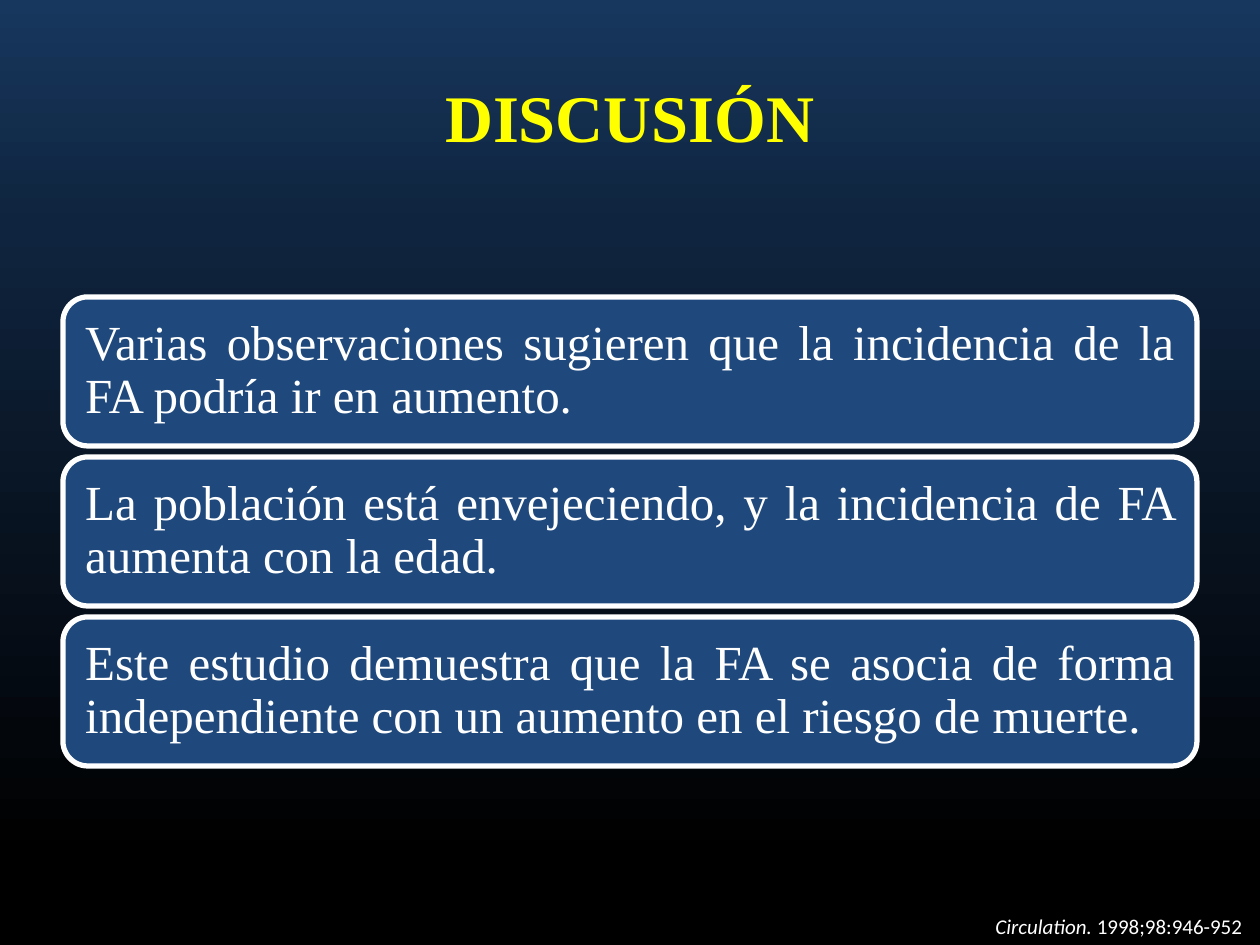
from copy import deepcopy

from pptx import Presentation
from pptx.dml.color import RGBColor
from pptx.enum.shapes import MSO_SHAPE
from pptx.enum.text import MSO_ANCHOR, MSO_AUTO_SIZE, PP_ALIGN
from pptx.oxml.ns import qn
from pptx.util import Pt

ROUNDED = MSO_SHAPE.ROUNDED_RECTANGLE
MIDDLE = MSO_ANCHOR.MIDDLE
CENTER, JUSTIFY = PP_ALIGN.CENTER, PP_ALIGN.JUSTIFY
FIT_SHAPE = MSO_AUTO_SIZE.SHAPE_TO_FIT_TEXT

EMU_PER_PX = 914400 / 126
SERIF, SANS = "Times New Roman", "Calibri"
COLORS = {
    "sky": "17375E",
    "navy": "0F243E",
    "black": "000000",
    "title": "FFFF00",
    "card": "1F497D",
    "white": "FFFFFF",
}
BACKDROP = [("sky", 0), ("navy", 0.24), ("black", 0.91)]
FINDINGS = [
    "Varias observaciones sugieren que la incidencia de la FA podría ir en aumento.",
    "La población está envejeciendo, y la incidencia de FA aumenta con la edad.",
    "Este estudio demuestra que la FA se asocia de forma independiente con un "
    "aumento en el riesgo de muerte.",
]


def px(length):
    return round(length * EMU_PER_PX)


def color(name):
    return RGBColor.from_string(COLORS[name])


def style(run, font_name, size, color_name, bold=False, italic=False):
    font = run.font
    font.name, font.size = font_name, Pt(size)
    font.bold, font.italic = bold, italic
    font.color.rgb = color(color_name)


def paint_background(slide):
    fill = slide.background.fill
    fill.gradient()
    fill.gradient_angle = 270
    # A new gradient has two stops; add the middle one
    first_stop = next(slide.element.iter(qn("a:gs")))
    first_stop.addnext(deepcopy(first_stop))
    for stop, (name, position) in zip(fill.gradient_stops, BACKDROP):
        stop.color.rgb = color(name)
        stop.position = position


def add_title(slide, left, top, width, height):
    title = slide.shapes.add_textbox(px(left), px(top), px(width), px(height))
    frame = title.text_frame
    frame.word_wrap = True
    frame.vertical_anchor = MIDDLE
    frame.text = "DISCUSIÓN"
    heading = frame.paragraphs[0]
    heading.alignment = CENTER
    style(heading.runs[0], SERIF, 38, "title", bold=True)


def add_card(slide, finding, left, top, width, height):
    card = slide.shapes.add_shape(ROUNDED, px(left), px(top), px(width), px(height))
    card.shadow.inherit = False
    card.fill.solid()
    card.fill.fore_color.rgb = color("card")
    card.line.color.rgb = color("white")
    card.line.width = Pt(3)

    frame = card.text_frame
    frame.word_wrap = True
    frame.vertical_anchor = MIDDLE
    frame.margin_left = frame.margin_right = px(15)
    frame.margin_top = frame.margin_bottom = px(15)
    frame.text = finding
    sentence = frame.paragraphs[0]
    sentence.alignment = JUSTIFY
    sentence.line_spacing = 0.9
    style(sentence.runs[0], SERIF, 28, "white")


def add_findings(slide, left, top, width, height, gap=11):
    count = len(FINDINGS)
    card_height = (height - gap * (count - 1)) // count
    for row, finding in enumerate(FINDINGS):
        card_top = top + row * (card_height + gap)
        add_card(slide, finding, left, card_top, width, card_height)


def add_citation(slide, left, top, width, height):
    citation = slide.shapes.add_textbox(px(left), px(top), px(width), px(height))
    frame = citation.text_frame
    frame.word_wrap = False
    frame.auto_size = FIT_SHAPE
    reference = frame.paragraphs[0]
    for text, italic in [("Circulation. ", True), ("1998;98:946-952", False)]:
        run = reference.add_run()
        run.text = text
        style(run, SANS, 12, "white", italic=italic)


def main():
    deck = Presentation()
    deck.slide_width, deck.slide_height = px(1260), px(945)
    slide = deck.slides.add_slide(deck.slide_layouts[6])

    paint_background(slide)
    add_title(slide, 63, 37, 1134, 158)
    add_findings(slide, 63, 297, 1134, 469)
    add_citation(slide, 983, 907, 276, 38)

    deck.save("out.pptx")


if __name__ == "__main__":
    main()
